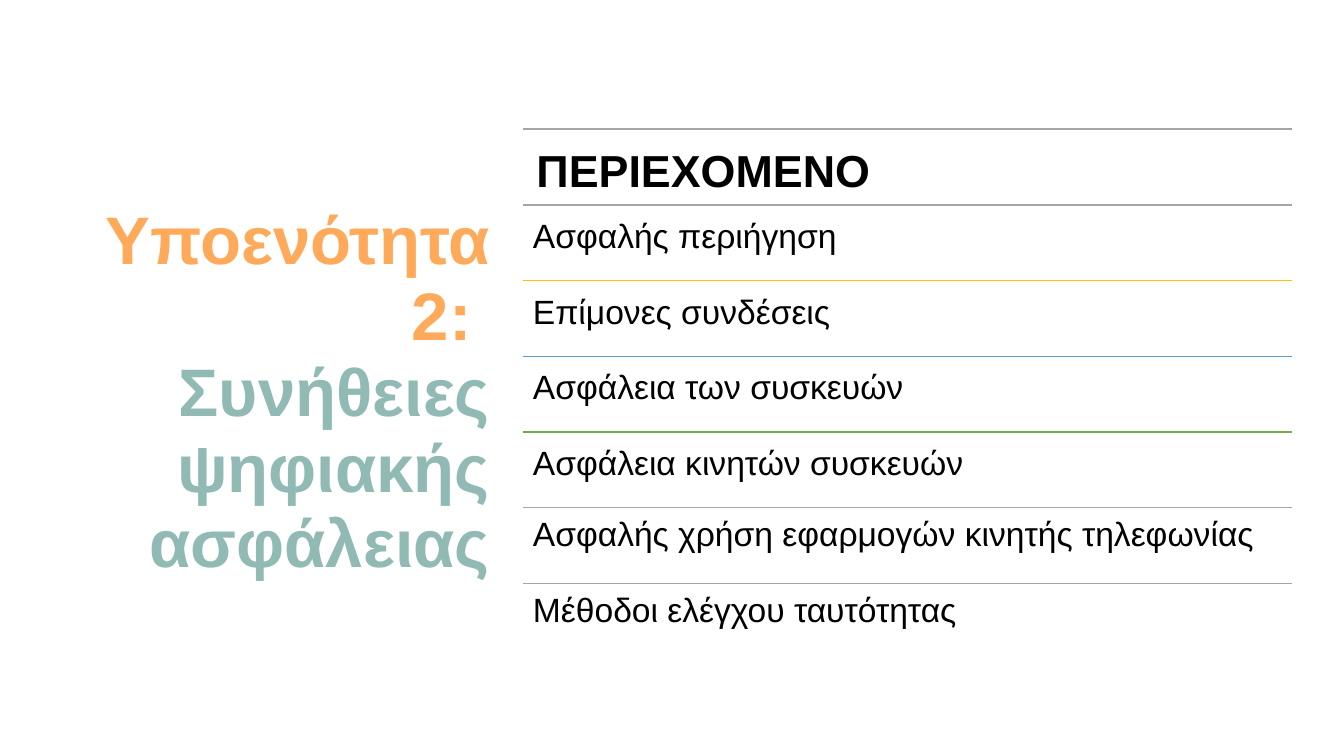
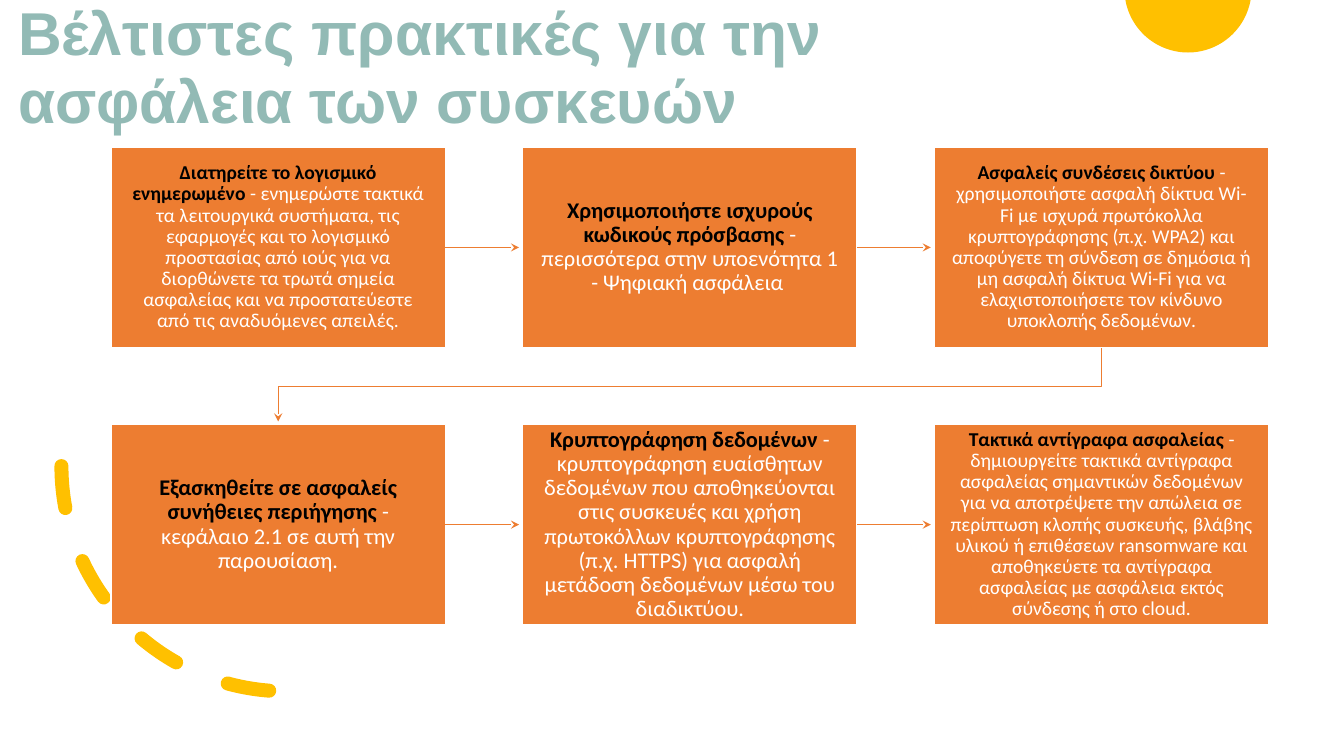
from dataclasses import dataclass
from math import asin, cos, pi, sin

from lxml.etree import SubElement
from pptx import Presentation
from pptx.dml.color import RGBColor
from pptx.enum.dml import MSO_LINE
from pptx.enum.shapes import MSO_CONNECTOR, MSO_SHAPE
from pptx.enum.text import MSO_ANCHOR, PP_ALIGN
from pptx.oxml.ns import qn
from pptx.util import Pt


@dataclass(frozen=True)
class Theme:
    sage: str = "92BAB5"
    peach: str = "FFAA5A"
    orange: str = "ED7D31"
    gold: str = "FFC000"
    gray: str = "A5A5A5"
    blue: str = "599BD5"
    green: str = "70AD47"
    black: str = "000000"
    white: str = "FFFFFF"
    heading_font: str = "Arial"
    box_font: str = "Calibri"
    section_size: float = 48
    title_size: float = 43.2
    header_size: float = 32
    item_size: float = 24
    arrow_width: float = 0.75
    rule_width: float = 1


THEME = Theme()
BOX_WIDTH, BOX_HEIGHT = 239, 143.3
BOX_LEFT, BOX_TOP = 79.2, 105.1
COLUMN_STEP, ROW_STEP = 294.1, 198
ARROW_LENGTH = 52.6


def write_text(shape, pieces, *, font, size, bold=None, align=PP_ALIGN.LEFT,
               anchor=MSO_ANCHOR.TOP, insets=(7.2, 3.6), spacing=1.0):
    """Write (text, colour, bold) pieces as one paragraph; a final newline breaks the line."""
    frame = shape.text_frame
    frame.word_wrap = True
    frame.vertical_anchor = anchor
    frame.margin_left = frame.margin_right = Pt(insets[0])
    frame.margin_top = frame.margin_bottom = Pt(insets[1])
    paragraph = frame.paragraphs[0]
    paragraph.alignment = align
    paragraph.line_spacing = spacing
    for text, color, piece_bold in pieces:
        run = paragraph.add_run()
        run.text = text.rstrip("\n")
        run.font.name = font
        run.font.size = Pt(size)
        run.font.bold = piece_bold
        run.font.color.rgb = RGBColor.from_string(color)
        if text.endswith("\n"):
            paragraph.add_line_break()


class Deck:
    def __init__(self, theme):
        self.theme = theme
        self.presentation = Presentation()
        self.presentation.slide_width = Pt(960)
        self.presentation.slide_height = Pt(540)
        self.slide = None

    def new_slide(self):
        self.slide = self.presentation.slides.add_slide(self.presentation.slide_layouts[6])

    def style(self, shape, fill=None, line=None, width=1):
        shape.shadow.inherit = False
        if fill:
            shape.fill.solid()
            shape.fill.fore_color.rgb = RGBColor.from_string(fill)
        else:
            shape.fill.background()
        if line:
            self.stroke(shape, line, width)
        else:
            shape.line.fill.background()
        return shape

    def stroke(self, shape, color, width):
        shape.line.color.rgb = RGBColor.from_string(color)
        shape.line.width = Pt(width)

    def arrowhead(self, shape):
        line = shape.element.spPr.find(qn("a:ln"))
        SubElement(line, qn("a:tailEnd"), type="stealth")

    def text(self, left, top, width, height, pieces, **text_format):
        shape = self.slide.shapes.add_textbox(Pt(left), Pt(top), Pt(width), Pt(height))
        write_text(shape, pieces, **text_format)

    def title(self, left, top, width, height, pieces, size, align=PP_ALIGN.LEFT):
        self.text(left, top, width, height, [(text, color, True) for text, color in pieces],
                  font=self.theme.heading_font, size=size, align=align,
                  anchor=MSO_ANCHOR.MIDDLE, spacing=0.94)

    def connector(self, start, end, color, width):
        points = [Pt(value) for value in (*start, *end)]
        connector = self.slide.shapes.add_connector(MSO_CONNECTOR.STRAIGHT, *points)
        self.stroke(connector, color, width)
        SubElement(connector.element.spPr, qn("a:effectLst"))
        return connector

    def box(self, left, top, heading, body, size):
        shape = self.slide.shapes.add_shape(
            MSO_SHAPE.RECTANGLE, Pt(left), Pt(top), Pt(BOX_WIDTH), Pt(BOX_HEIGHT))
        self.style(shape, self.theme.orange, self.theme.white)
        write_text(shape, [(heading, self.theme.black, True), (body, self.theme.white, False)],
                   font=self.theme.box_font, size=size, align=PP_ALIGN.CENTER,
                   anchor=MSO_ANCHOR.MIDDLE, insets=(11.5, 12.2), spacing=0.9)
        return shape

    def arrow_from(self, box, left, top):
        """Point from the right side of a box almost to the next box."""
        right, middle = left + BOX_WIDTH, top + BOX_HEIGHT / 2
        arrow = self.connector((right, middle), (right + ARROW_LENGTH, middle),
                               self.theme.orange, self.theme.arrow_width)
        arrow.begin_connect(box, 3)
        self.arrowhead(arrow)

    def outline(self, points, close):
        start, *others = [(Pt(x), Pt(y)) for x, y in points]
        builder = self.slide.shapes.build_freeform(*start, scale=1.0)
        builder.add_line_segments(others, close=close)
        return builder.convert_to_shape()

    def row_arrow(self):
        """Lead from the last box of the first row to the first box of the second."""
        start_x = BOX_LEFT + 2 * COLUMN_STEP + BOX_WIDTH / 2
        end_x = BOX_LEFT + BOX_WIDTH / 2
        start_y, end_y = BOX_TOP + BOX_HEIGHT, BOX_TOP + ROW_STEP - 2
        bend_y = BOX_TOP + (BOX_HEIGHT + ROW_STEP) / 2
        arrow = self.outline([(start_x, start_y), (start_x, bend_y),
                              (end_x, bend_y), (end_x, end_y)], close=False)
        self.style(arrow, line=self.theme.orange, width=self.theme.arrow_width)
        self.arrowhead(arrow)

    def cut_disc(self, center_x, center_y, radius, steps=60):
        """Draw the part of a disc that lies below the top edge of the slide."""
        first = asin(-center_y / radius)
        angles = [first + (pi - 2 * first) * step / steps for step in range(steps + 1)]
        disc = self.outline([(center_x + radius * cos(angle), center_y + radius * sin(angle))
                             for angle in angles], close=True)
        self.style(disc, self.theme.gold)

    def dashed_arc(self, left, top, diameter):
        arc = self.slide.shapes.add_shape(
            MSO_SHAPE.ARC, Pt(left), Pt(top), Pt(diameter), Pt(diameter))
        self.style(arc, line=self.theme.gold, width=10)
        arc.line.dash_style = MSO_LINE.DASH
        arc.rotation = 270
        properties = arc.element.spPr
        properties.find(qn("a:xfrm")).set("flipH", "1")
        properties.find(qn("a:ln")).set("cap", "rnd")


def build_contents(deck):
    theme = deck.theme
    deck.new_slide()
    deck.title(27.4, 61.2, 329.8, 440,
               [("Υποενότητα 2: \n", theme.peach), ("Συνήθειες ψηφιακής ασφάλειας", theme.sage)],
               theme.section_size, PP_ALIGN.RIGHT)
    rows = [
        ("ΠΕΡΙΕΧΟΜΕΝΟ", theme.gray, 1.0),
        ("Ασφαλής περιήγηση", theme.gray, 1.0),
        ("Επίμονες συνδέσεις", theme.gold, 1.0),
        ("Ασφάλεια των συσκευών", theme.blue, 1.0),
        ("Ασφάλεια κινητών συσκευών", theme.green, 1.0),
        ("Ασφαλής χρήση εφαρμογών κινητής τηλεφωνίας", theme.gray, 0.9),
        ("Μέθοδοι ελέγχου ταυτότητας", theme.gray, 0.9),
    ]
    left, first_top, width, row_height = 373.6, 92.2, 549.4, 54.1
    for index, (label, color, spacing) in enumerate(rows):
        top = first_top + index * row_height
        is_header = index == 0
        inset = 9.6 if is_header else 7.2
        deck.connector((left, top), (left + width, top), color, theme.rule_width)
        deck.text(left, top, width, row_height, [(label, theme.black, is_header)],
                  font=theme.heading_font, spacing=spacing, insets=(inset, inset),
                  size=theme.header_size if is_header else theme.item_size)


def build_practices(deck):
    theme = deck.theme
    deck.new_slide()
    deck.cut_disc(848.6, -7.9, 45.4)
    deck.title(5.8, 18.7, 752.4, 61.2,
               [("Βέλτιστες πρακτικές για την ασφάλεια των συσκευών", theme.sage)],
               theme.title_size)
    deck.dashed_arc(43.9, 172.1, 321.8)
    practices = [
        ("Διατηρείτε το λογισμικό ενημερωμένο ",
         "- ενημερώστε τακτικά τα λειτουργικά συστήματα, τις εφαρμογές και το λογισμικό "
         "προστασίας από ιούς για να διορθώνετε τα τρωτά σημεία ασφαλείας και να "
         "προστατεύεστε από τις αναδυόμενες απειλές.", 14),
        ("Χρησιμοποιήστε ισχυρούς κωδικούς πρόσβασης ",
         "- περισσότερα στην υποενότητα 1 - Ψηφιακή ασφάλεια ", 16),
        ("Ασφαλείς συνδέσεις δικτύου ",
         "- χρησιμοποιήστε ασφαλή δίκτυα Wi-Fi με ισχυρά πρωτόκολλα κρυπτογράφησης "
         "(π.χ. WPA2) και αποφύγετε τη σύνδεση σε δημόσια ή μη ασφαλή δίκτυα Wi-Fi για να "
         "ελαχιστοποιήσετε τον κίνδυνο υποκλοπής δεδομένων.", 14),
        ("Εξασκηθείτε σε ασφαλείς συνήθειες περιήγησης ",
         "- κεφάλαιο 2.1 σε αυτή την παρουσίαση.", 16),
        ("Κρυπτογράφηση δεδομένων ",
         "- κρυπτογράφηση ευαίσθητων δεδομένων που αποθηκεύονται στις συσκευές και χρήση "
         "πρωτοκόλλων κρυπτογράφησης (π.χ. HTTPS) για ασφαλή μετάδοση δεδομένων μέσω του "
         "διαδικτύου.", 16),
        ("Τακτικά αντίγραφα ασφαλείας ",
         "- δημιουργείτε τακτικά αντίγραφα ασφαλείας σημαντικών δεδομένων για να αποτρέψετε "
         "την απώλεια σε περίπτωση κλοπής συσκευής, βλάβης υλικού ή επιθέσεων ransomware και "
         "αποθηκεύετε τα αντίγραφα ασφαλείας με ασφάλεια εκτός σύνδεσης ή στο cloud.", 14),
    ]
    for index, (heading, body, size) in enumerate(practices):
        row, column = divmod(index, 3)
        left, top = BOX_LEFT + column * COLUMN_STEP, BOX_TOP + row * ROW_STEP
        box = deck.box(left, top, heading, body, size)
        if column < 2:
            deck.arrow_from(box, left, top)
    deck.row_arrow()


def main():
    deck = Deck(THEME)
    build_contents(deck)
    build_practices(deck)
    deck.presentation.save("out.pptx")


if __name__ == "__main__":
    main()
